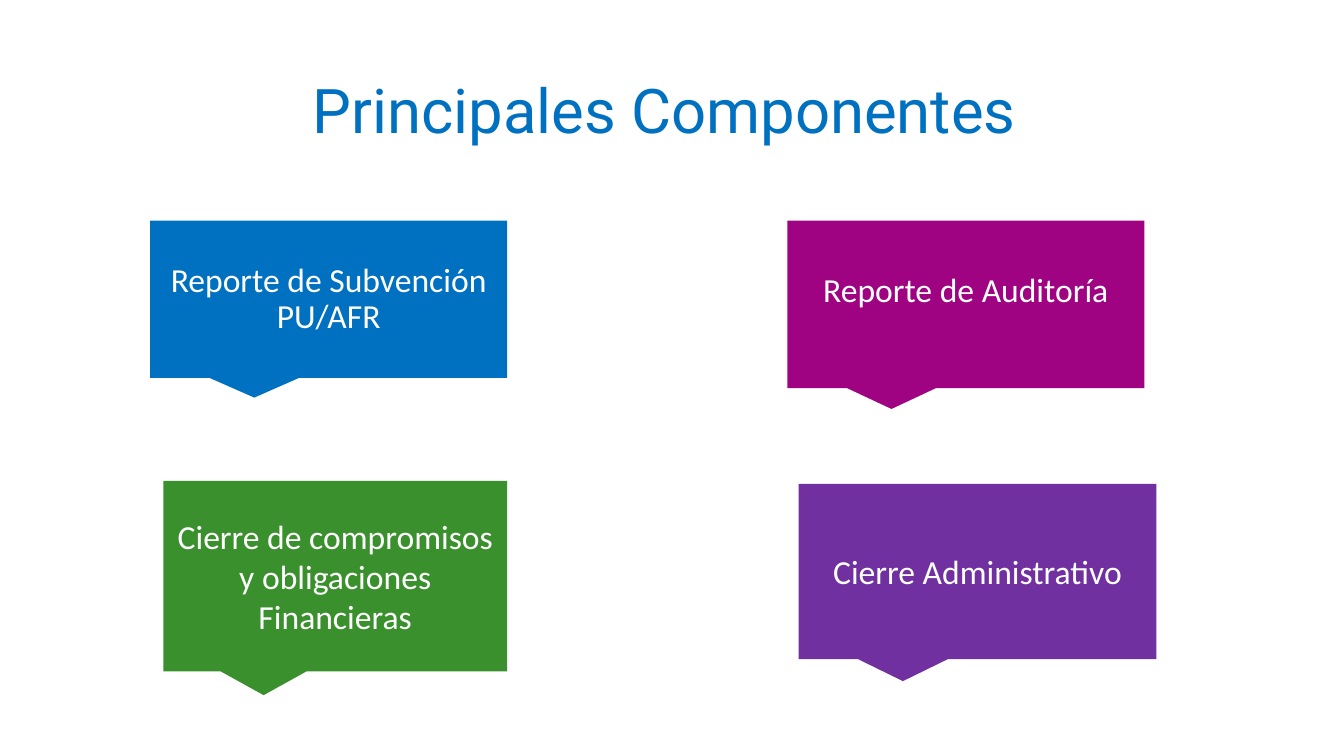
from pptx import Presentation
from pptx.dml.color import RGBColor
from pptx.enum.shapes import MSO_SHAPE
from pptx.enum.text import MSO_ANCHOR, MSO_AUTO_SIZE, PP_ALIGN
from pptx.util import Pt

PX = 9144  # 100 px to the inch
CALLOUT = MSO_SHAPE.RECTANGULAR_CALLOUT
MIDDLE = MSO_ANCHOR.MIDDLE
CENTER = PP_ALIGN.CENTER
NO_AUTOFIT = MSO_AUTO_SIZE.NONE
TITLE_ONLY = 5

# text, fill, box (left, top, width, height), further text format
COMPONENTS = [
    ("Reporte de Subvención PU/AFR", "0070C0", (149, 219, 354, 156),
     {"line_spacing": 0.9}),
    ("Cierre de compromisos y obligaciones Financieras", "3A902C",
     (162, 477, 341, 189), {}),
    ("Reporte de Auditoría", "9F0381", (781, 219, 354, 166),
     {"bottom_inset": 35}),
    ("Cierre Administrativo", "7030A0", (792, 480, 355, 174), {}),
]


def color(hex_string):
    return RGBColor.from_string(hex_string)


def emu(box):
    return [length * PX for length in box]


def write(shape, text, *, font="Calibri", size=24, fill="FFFFFF",
          line_spacing=1.0, bottom_inset=5):
    frame = shape.text_frame
    frame.word_wrap = True
    frame.auto_size = NO_AUTOFIT
    frame.vertical_anchor = MIDDLE
    frame.margin_bottom = bottom_inset * PX
    para = frame.paragraphs[0]
    para.alignment = CENTER
    para.line_spacing = line_spacing
    span = para.add_run()
    span.text = text
    span.font.name = font
    span.font.size = Pt(size)
    span.font.color.rgb = color(fill)


def add_title(page, box, text):
    title = page.shapes.title
    title.left, title.top, title.width, title.height = emu(box)
    write(title, text, font="Roboto", size=44, fill="0070C0", line_spacing=0.9)


def add_callout(page, box, text, fill, **text_format):
    callout = page.shapes.add_shape(CALLOUT, *emu(box))
    callout.shadow.inherit = False
    callout.fill.solid()
    callout.fill.fore_color.rgb = color(fill)
    callout.line.fill.background()
    write(callout, text, **text_format)


def main():
    deck = Presentation()
    deck.slide_width, deck.slide_height = emu((1333, 750))
    page = deck.slides.add_slide(deck.slide_layouts[TITLE_ONLY])
    add_title(page, (92, 40, 1150, 145), "Principales Componentes ")
    for text, fill, box, text_format in COMPONENTS:
        add_callout(page, box, text, fill, **text_format)
    deck.save("out.pptx")


if __name__ == "__main__":
    main()
